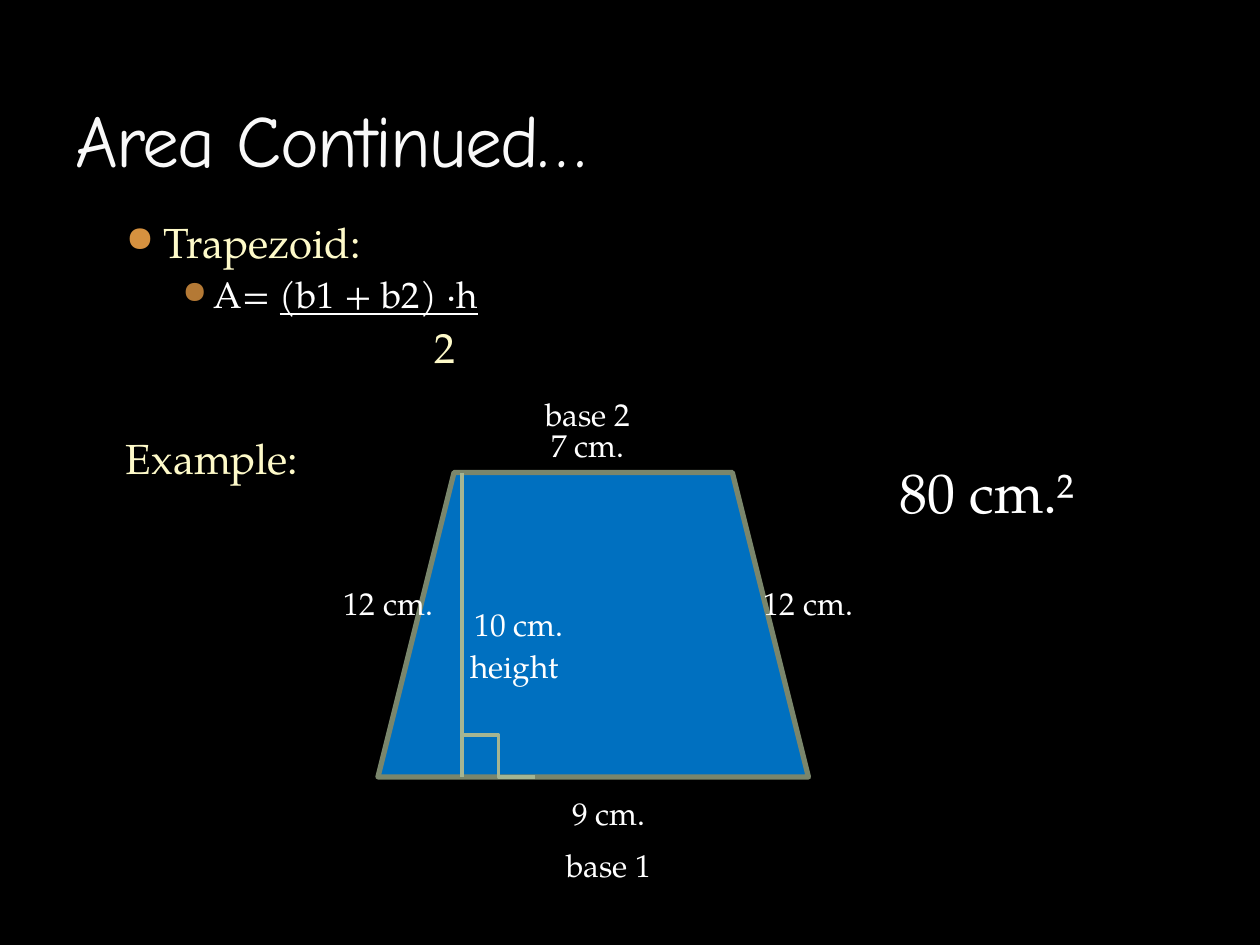
import pptx
import pptx.util
import pptx.dml.color
import pptx.enum.shapes
import pptx.enum.text
import pptx.oxml.ns
from dataclasses import dataclass
from lxml import etree

Pt = pptx.util.Pt
Inches = pptx.util.Inches
ALIGN = pptx.enum.text.PP_ALIGN
ANCHOR = pptx.enum.text.MSO_ANCHOR
qn = pptx.oxml.ns.qn
COLS, ROWS = 120, 90  # square grid over the slide


@dataclass(frozen=True)
class Theme:
    head_font: str = "Comic Neue"
    font: str = "TeX Gyre Pagella"
    bg: str = "000000"
    title: str = "F9F9F9"
    white: str = "FFFFFF"
    cream: str = "FEFAC9"
    bullet: str = "D6913F"
    sub_bullet: str = "B47935"
    fill: str = "0070C0"
    edge: str = "7A866C"
    guide: str = "A5B592"
    title_pt: int = 42
    answer_pt: int = 32
    body_pt: int = 24
    formula_pt: int = 21
    label_pt: int = 18


T = Theme()
prs = pptx.Presentation()
prs.slide_width, prs.slide_height = Inches(10), Inches(7.5)


def rgb(value):
    return pptx.dml.color.RGBColor.from_string(value)


def grid(a, b, c, d):
    """Turn columns and rows into slide lengths."""
    w, h = prs.slide_width, prs.slide_height
    return [round(n * size / parts) for n, size, parts in
            ((a, w, COLS), (b, h, ROWS), (c, w, COLS), (d, h, ROWS))]


def add_run(p, text, color, **formats):
    r = p.add_run()
    r.text = text
    r.font.color.rgb = rgb(color)
    for name, value in {"name": T.font, **formats}.items():
        setattr(r.font, name, value)
    return r


def add_text_box(s, box):
    tf = s.shapes.add_textbox(*grid(*box)).text_frame
    tf.word_wrap = True
    return tf


def add_label(s, text, box, size=T.label_pt, align=ALIGN.CENTER):
    p = add_text_box(s, box).paragraphs[0]
    p.alignment = align
    add_run(p, text, T.white, size=Pt(size))


def add_guide(s, kind, ends):
    line = s.shapes.add_connector(kind, *grid(*ends))
    line.line.color.rgb = rgb(T.guide)
    line.line.width = Pt(1.75)
    etree.SubElement(line._element.spPr, qn("a:effectLst"))


def format_paragraph(p, margin, indent=0, bullet=None, before=3):
    p.space_before = Pt(before)
    pPr = p._p.get_or_add_pPr()
    pPr.set("marL", str(Inches(margin)))
    pPr.set("indent", str(Inches(indent)))
    if bullet:
        color = etree.SubElement(pPr, qn("a:buClr"))
        etree.SubElement(color, qn("a:srgbClr"), val=bullet)
        etree.SubElement(pPr, qn("a:buSzPct"), val="85000")
        etree.SubElement(pPr, qn("a:buChar"), char="●")


def add_title(s, text, box):
    sp = s.shapes.title
    sp.left, sp.top, sp.width, sp.height = grid(*box)
    tf = sp.text_frame
    tf.auto_size = pptx.enum.text.MSO_AUTO_SIZE.NONE
    tf.vertical_anchor = ANCHOR.BOTTOM
    p = tf.paragraphs[0]
    p.alignment = ALIGN.LEFT
    r = add_run(p, text, T.title, name=T.head_font, size=Pt(T.title_pt))
    r._r.get_or_add_rPr().set("spc", "-100")


def add_formula(s, box):
    tf = add_text_box(s, box)
    body, formula = Pt(T.body_pt), Pt(T.formula_pt)
    p = tf.paragraphs[0]
    format_paragraph(p, 0.7, -0.3, T.bullet)
    add_run(p, "Trapezoid:", T.cream, size=body)
    # Numerator, underlined as the fraction bar
    p = tf.add_paragraph()
    format_paragraph(p, 1.1, -0.25, T.sub_bullet)
    add_run(p, "A= ", T.white, size=formula)
    add_run(p, "(b1 + b2) ·h", T.white, size=formula, underline=True)
    # Denominator, then the example heading
    for text, margin, before in (("2", 2.85, 3), ("Example:", 0.4, 35)):
        p = tf.add_paragraph()
        format_paragraph(p, margin, before=before)
        add_run(p, text, T.cream, size=body)


def add_trapezoid(s, box):
    x, y, w, h = box
    sp = s.shapes.add_shape(pptx.enum.shapes.MSO_SHAPE.TRAPEZOID, *grid(*box))
    sp.shadow.inherit = False
    sp.fill.solid()
    sp.fill.fore_color.rgb = rgb(T.fill)
    sp.line.color.rgb = rgb(T.edge)
    sp.line.width = Pt(3)
    # Height and its right-angle mark
    foot, base = x + 8, y + h
    kinds = pptx.enum.shapes.MSO_CONNECTOR
    add_guide(s, kinds.STRAIGHT, (foot, y, foot, base))
    add_guide(s, kinds.ELBOW, (foot, base - 4, foot + 7, base))
    # Measurements, then names of the parts
    add_label(s, "10 cm.", (foot, y + 12, 20, 5), align=ALIGN.LEFT)
    for text, dx, dy in (("9 cm.", 12, h + 1), ("7 cm.", 10, -5),
                         ("12 cm.", -9, 10), ("12 cm.", 31, 10)):
        add_label(s, text, (x + dx, y + dy, 20, 5))
    for text, dx, dy in (("base 1", 14, h + 6), ("base 2", 12, -8),
                         ("height", 5, 16)):
        add_label(s, text, (x + dx, y + dy, 16, 5))


def main():
    s = prs.slides.add_slide(prs.slide_layouts[5])
    s.background.fill.solid()
    s.background.fill.fore_color.rgb = rgb(T.bg)
    add_title(s, "Area Continued…", (6, 2, 108, 16))
    add_formula(s, (6, 20, 108, 60))
    add_trapezoid(s, (36, 45, 41, 29))
    add_label(s, "80 cm.²", (84, 43, 20, 8), T.answer_pt)
    prs.save("out.pptx")


if __name__ == "__main__":
    main()
